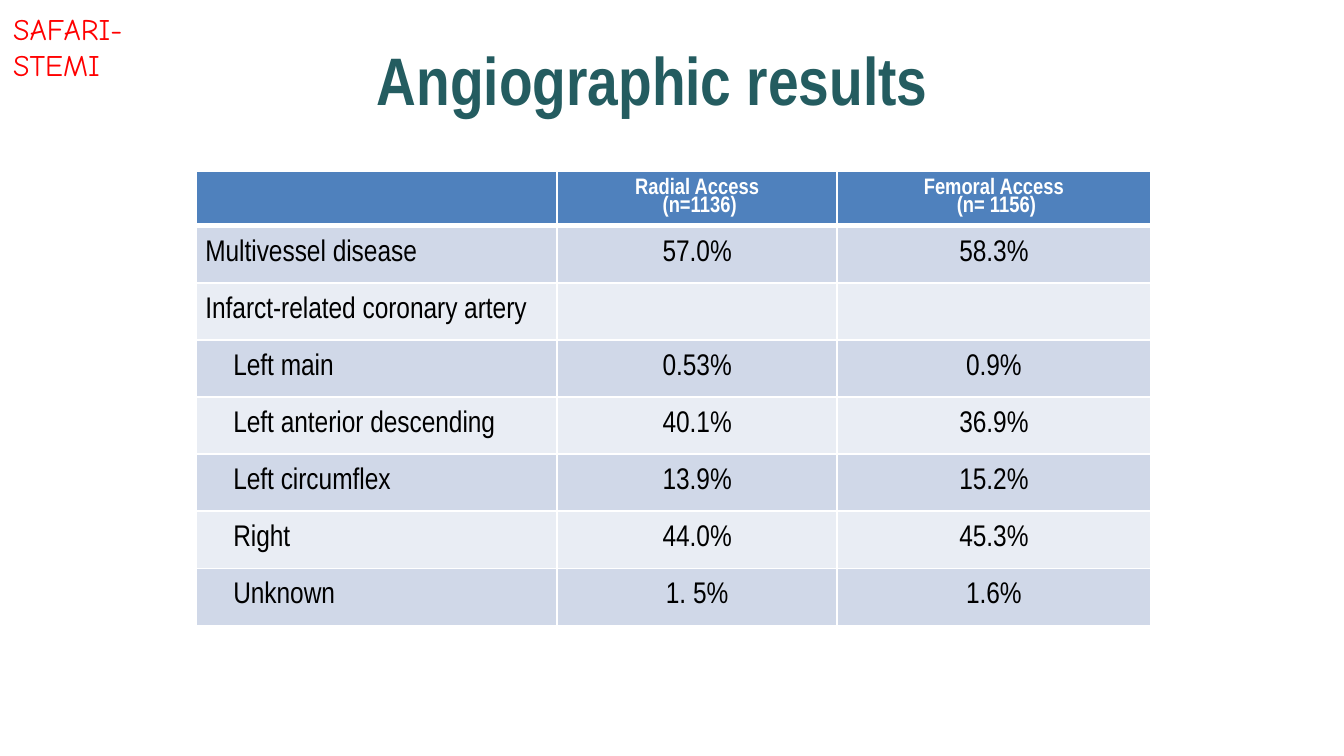
from dataclasses import dataclass

from lxml.etree import SubElement
from pptx import Presentation
from pptx.dml.color import RGBColor as Color
from pptx.enum.text import MSO_ANCHOR as Anchor, MSO_AUTO_SIZE as AutoSize, PP_ALIGN as Align
from pptx.oxml.ns import qn
from pptx.util import Pt

HEADER = ["", "Radial Access\n (n=1136)", "Femoral Access\n (n= 1156)"]
RESULTS = [
    ("Multivessel disease", "57.0%", "58.3%"),
    ("Infarct-related coronary artery", "", ""),
    ("Left main", "0.53%", "0.9%"),
    ("Left anterior descending", "40.1%", "36.9%"),
    ("Left circumflex", "13.9%", "15.2%"),
    ("Right", "44.0%", "45.3%"),
    ("Unknown", "1. 5%", "1.6%"),
]
FIRST_ARTERY_ROW = 3


@dataclass(frozen=True)
class Theme:
    """Colours, fonts and type sizes of the slide."""

    title: str = "245C60"
    study: str = "FF0000"
    header: str = "4F81BD"
    bands: tuple = ("D0D8E8", "E9EDF4")
    white: str = "FFFFFF"
    black: str = "000000"
    font: str = "Arial Narrow"
    study_font: str = "Comic Neue"
    title_size: int = 36
    header_size: int = 12
    body_size: int = 16


class SlideBuilder:
    """Draws styled elements on the current slide."""

    def __init__(self, slide, theme):
        self.slide = slide
        self.theme = theme

    def format_text(self, text_frame, font, size, color, bold=False, align=Align.LEFT, spacing=1.0):
        for paragraph in text_frame.paragraphs:
            paragraph.alignment = align
            paragraph.line_spacing = spacing
            for item in (paragraph, *paragraph.runs):
                item.font.name = font
                item.font.size = Pt(size)
                item.font.bold = bold
                item.font.color.rgb = Color.from_string(color)

    def add_title(self, text, left, top, width, height):
        title = self.slide.shapes.title
        title.left, title.top, title.width, title.height = Pt(left), Pt(top), Pt(width), Pt(height)
        title.text_frame.text = text
        title.text_frame.vertical_anchor = Anchor.MIDDLE
        self.format_text(title.text_frame, self.theme.font, self.theme.title_size,
                         self.theme.title, True, Align.CENTER)

    def add_study_name(self, text, left, top, width, height):
        box = self.slide.shapes.add_textbox(Pt(left), Pt(top), Pt(width), Pt(height))
        box.text_frame.word_wrap = True
        box.text_frame.auto_size = AutoSize.SHAPE_TO_FIT_TEXT
        box.text_frame.text = text
        self.format_text(box.text_frame, self.theme.study_font, self.theme.body_size, self.theme.study)

    def add_borders(self, cell, bottom, top):
        properties = cell._tc.get_or_add_tcPr()
        fill = properties[0]
        for side, width in (("L", 1), ("R", 1), ("T", top), ("B", bottom)):
            line = SubElement(properties, qn(f"a:ln{side}"), w=str(Pt(width)))
            solid = SubElement(line, qn("a:solidFill"))
            SubElement(solid, qn("a:srgbClr"), val=self.theme.white)
        properties.append(fill)

    def format_cell(self, cell, text, row, column):
        theme = self.theme
        is_header = row == 0
        cell.text_frame.text = text
        cell.vertical_anchor = Anchor.MIDDLE
        is_artery = column == 0 and row >= FIRST_ARTERY_ROW
        cell.margin_left = Pt(20 if is_artery else 5)
        cell.margin_right = Pt(5)
        cell.margin_top = cell.margin_bottom = Pt(0)
        cell.fill.solid()
        fill = theme.header if is_header else theme.bands[(row - 1) % 2]
        cell.fill.fore_color.rgb = Color.from_string(fill)
        self.add_borders(cell, 3 if is_header else 1, 3 if row == 1 else 1)
        self.format_text(
            cell.text_frame, theme.font,
            theme.header_size if is_header else theme.body_size,
            theme.white if is_header else theme.black,
            is_header, Align.CENTER if column else Align.LEFT, 0.82)

    def add_table(self, rows, left, top, widths, heights):
        frame = self.slide.shapes.add_table(len(rows), len(widths), Pt(left), Pt(top),
                                            Pt(sum(widths)), Pt(sum(heights)))
        table = frame.table
        for column, width in zip(table.columns, widths):
            column.width = Pt(width)
        for table_row, height in zip(table.rows, heights):
            table_row.height = Pt(height)
        for row, texts in enumerate(rows):
            for column, text in enumerate(texts):
                self.format_cell(table.cell(row, column), text, row, column)


def main():
    presentation = Presentation()
    presentation.slide_width, presentation.slide_height = Pt(720), Pt(405)
    slide = presentation.slides.add_slide(presentation.slide_layouts[5])
    builder = SlideBuilder(slide, Theme())
    builder.add_title("Angiographic results", 17, 11, 665, 62)
    builder.add_table([HEADER, *RESULTS], 105, 91.5, [193.5, 150, 168],
                      [29.5] + [30.6] * len(RESULTS))
    builder.add_study_name("SAFARI-STEMI", 0, 2, 92, 27)
    presentation.save("out.pptx")


if __name__ == "__main__":
    main()
